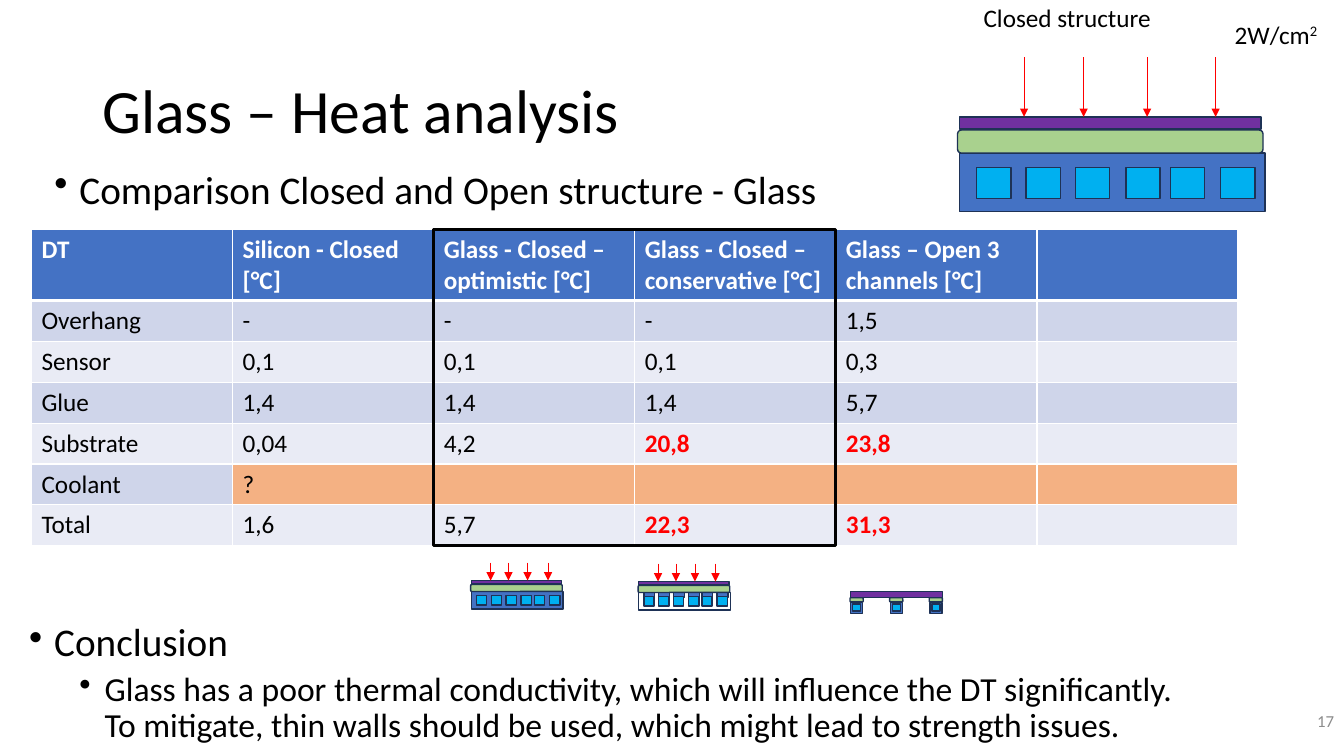
"""Builds the glass heat analysis slide with its comparison table and structure sketches."""
from lxml import etree
from pptx import Presentation, util as u
from pptx.dml.color import RGBColor
from pptx.enum import shapes, text
from pptx.oxml import ns

THEME = dict(
    font="Calibri", title=44, body=28, sub=24, label=18, number=12,
    black="000000", white="FFFFFF", grey="8C8C8C", red="FF0000", outline="1E3256",
    blue="4472C4", purple="7030A0", green="A9D18E", cyan="00B0F0",
    band=("CFD5EA", "E9EBF5"), orange="F4B183",
)

TITLE = "Glass – Heat analysis"
TOPIC = "Comparison Closed and Open structure - Glass"
CONCLUSION = "Conclusion"
FINDING = ("Glass has a poor thermal conductivity, which will influence the DT significantly. "
           "To mitigate, thin walls should be used, which might lead to strength issues.")
ROWS = [
    ["DT", "Silicon - Closed [°C]", "Glass - Closed – optimistic [°C]",
     "Glass - Closed – conservative [°C]", "Glass – Open 3 channels [°C]", ""],
    ["Overhang", "-", "-", "-", "1,5", ""],
    ["Sensor", "0,1", "0,1", "0,1", "0,3", ""],
    ["Glue", "1,4", "1,4", "1,4", "5,7", ""],
    ["Substrate", "0,04", "4,2", "20,8", "23,8", ""],
    ["Coolant", "?", "", "", "", ""],
    ["Total", "1,6", "5,7", "22,3", "31,3", ""],
]
CRITICAL = {"20,8", "23,8", "22,3", "31,3"}

TABLE_X, TABLE_Y, COL_W, HEAD_H, ROW_H = 22.5, 164.2, 143.65, 50.2, 29.2
CHANNEL_X = [13.7, 49, 84.2, 120.2, 151.9, 187.9]
ARROW_X = [47.5, 90, 135.4, 184.3]
CLOSED = [(684, 83.5, 1, False), (336.2, 414.7, 0.3, False), (455.8, 415.4, 0.3, True)]
OPEN_X, OPEN_Y, PILLAR_GAP = 607.2, 422.6, 28.3

RECT = shapes.MSO_SHAPE.RECTANGLE
ROUND = shapes.MSO_SHAPE.ROUNDED_RECTANGLE


def rgb(value):
    return RGBColor.from_string(value)


def add_run(p, words, size, color="black", bold=False, raised=False):
    r = p.add_run()
    r.text = words
    r.font.name, r.font.size, r.font.bold = THEME["font"], u.Pt(size), bold
    r.font.color.rgb = rgb(THEME[color])
    if raised:
        r.font._element.set("baseline", "30000")


def add_box(s, x, y, w, h, anchor=text.MSO_ANCHOR.TOP):
    tf = s.shapes.add_textbox(u.Pt(x), u.Pt(y), u.Pt(w), u.Pt(h)).text_frame
    tf.word_wrap, tf.vertical_anchor = True, anchor
    return tf


def add_bullet(p, words, size, indent, before, spacing):
    p.line_spacing, p.space_before = spacing, u.Pt(before)
    pPr = p._p.get_or_add_pPr()
    pPr.set("marL", str(u.Pt(indent)))
    pPr.set("indent", str(u.Pt(-18)))
    etree.SubElement(pPr, ns.qn("a:buChar")).set("char", "•")
    add_run(p, words, size)


def add_part(parent, x, y, w, h, fill=None, kind=RECT, line="outline", weight=1):
    sp = parent.shapes.add_shape(kind, u.Pt(x), u.Pt(y), u.Pt(w), u.Pt(h))
    sp.shadow.inherit = False
    if fill:
        sp.fill.solid()
        sp.fill.fore_color.rgb = rgb(THEME[fill])
    else:
        sp.fill.background()
    sp.line.color.rgb, sp.line.width = rgb(THEME[line]), u.Pt(weight)


def add_arrow(parent, x, top, bottom):
    cn = parent.shapes.add_connector(shapes.MSO_CONNECTOR.STRAIGHT,
                                     u.Pt(x), u.Pt(top), u.Pt(x), u.Pt(bottom))
    cn.line.color.rgb, cn.line.width = rgb(THEME["red"]), u.Pt(0.5)
    etree.SubElement(cn.line._get_or_add_ln(), ns.qn("a:tailEnd")).set("type", "triangle")
    etree.SubElement(cn._element.spPr, ns.qn("a:effectLst"))


def add_closed(s, x, y, k, thin_walls):
    grp = s.shapes.add_group_shape()

    def part(dx, dy, w, h, fill, kind=RECT):
        add_part(grp, x + k * dx, y + k * dy, k * w, k * h, fill, kind)

    part(1.4, 0, 215.3, 8.6, "purple")
    if thin_walls:
        for dx in CHANNEL_X:
            part(dx, 26, 26, 12, "blue")
    part(1.4, 25.9, 218.2, 41.8, None if thin_walls else "blue")
    part(0, 9.4, 218.2, 16.5, "green", ROUND)
    for dx in CHANNEL_X:
        part(dx, 36, 24.5, 22.3, "cyan")
    for dx in ARROW_X:
        add_arrow(grp, x + k * dx, y - k * 42.5, y)


def add_open(s):
    grp = s.shapes.add_group_shape()
    add_part(grp, OPEN_X + 0.5, OPEN_Y, 65.5, 4.3, "purple")
    for i in range(3):
        x = OPEN_X + i * PILLAR_GAP
        add_part(grp, x + 0.4, OPEN_Y + 7.7, 8.6, 7.9, "blue")
        add_part(grp, x + 1.8, OPEN_Y + 8.9, 5.8, 5, "cyan")
        add_part(grp, x, OPEN_Y + 4.4, 9.4, 2.9, "green", ROUND)


def add_border(cell, side, weight):
    ln = etree.SubElement(cell._tc.get_or_add_tcPr(), ns.qn("a:ln" + side))
    ln.set("w", str(u.Pt(weight)))
    fill = etree.SubElement(ln, ns.qn("a:solidFill"))
    etree.SubElement(fill, ns.qn("a:srgbClr")).set("val", THEME["white"])


def cell_fill(i, j):
    if i == 0:
        return THEME["blue"]
    if ROWS[i][0] == "Coolant" and j:
        return THEME["orange"]
    return THEME["band"][(i - 1) % 2]


def add_results(s):
    n, m = len(ROWS), len(ROWS[0])
    tbl = s.shapes.add_table(n, m, u.Pt(TABLE_X), u.Pt(TABLE_Y), u.Pt(m * COL_W),
                             u.Pt(HEAD_H + (n - 1) * ROW_H)).table
    for col in tbl.columns:
        col.width = u.Pt(COL_W)
    for i, row in enumerate(ROWS):
        tbl.rows[i].height = u.Pt(ROW_H if i else HEAD_H)
        for j, words in enumerate(row):
            cell = tbl.cell(i, j)
            for side in "LRTB":
                add_border(cell, side, 3 if (i, side) in ((0, "B"), (1, "T")) else 1)
            cell.fill.solid()
            cell.fill.fore_color.rgb = rgb(cell_fill(i, j))
            if words:
                critical = words in CRITICAL
                color = "white" if i == 0 else "red" if critical else "black"
                add_run(cell.text_frame.paragraphs[0], words, THEME["label"], color,
                        i == 0 or critical)


def main():
    prs = Presentation()
    prs.slide_width, prs.slide_height = u.Pt(960), u.Pt(540)
    s = prs.slides.add_slide(prs.slide_layouts[6])

    p = add_box(s, 66, 28.75, 828, 104.4, text.MSO_ANCHOR.MIDDLE).paragraphs[0]
    p.line_spacing = 0.9
    add_run(p, TITLE, THEME["title"])
    p = add_box(s, 31.7, 121, 586, 37.4).paragraphs[0]
    add_bullet(p, TOPIC, THEME["body"], 18, 10, 0.8)
    p = add_box(s, 744, 500.5, 216, 28.8, text.MSO_ANCHOR.MIDDLE).paragraphs[0]
    p.alignment = text.PP_ALIGN.RIGHT
    add_run(p, "17", THEME["number"], "grey")

    p = add_box(s, 874.8, 10.1, 85, 29).paragraphs[0]
    add_run(p, "2W/cm", THEME["label"])
    add_run(p, "2", THEME["label"], raised=True)
    p = add_box(s, 695.5, -2.2, 183, 29).paragraphs[0]
    add_run(p, "Closed structure", THEME["label"])

    add_results(s)
    for x, y, k, thin_walls in CLOSED:
        add_closed(s, x, y, k, thin_walls)
    add_open(s)

    tf = add_box(s, 13.7, 441.4, 846.7, 98.6)
    add_bullet(tf.paragraphs[0], CONCLUSION, THEME["body"], 18, 10, 0.9)
    p = tf.add_paragraph()
    p.level = 1
    add_bullet(p, FINDING, THEME["sub"], 54, 5, 0.9)

    add_part(s, TABLE_X + 2 * COL_W, TABLE_Y, 2 * COL_W, HEAD_H + 6 * ROW_H,
             line="black", weight=2.25)
    prs.save("out.pptx")


if __name__ == "__main__":
    main()
